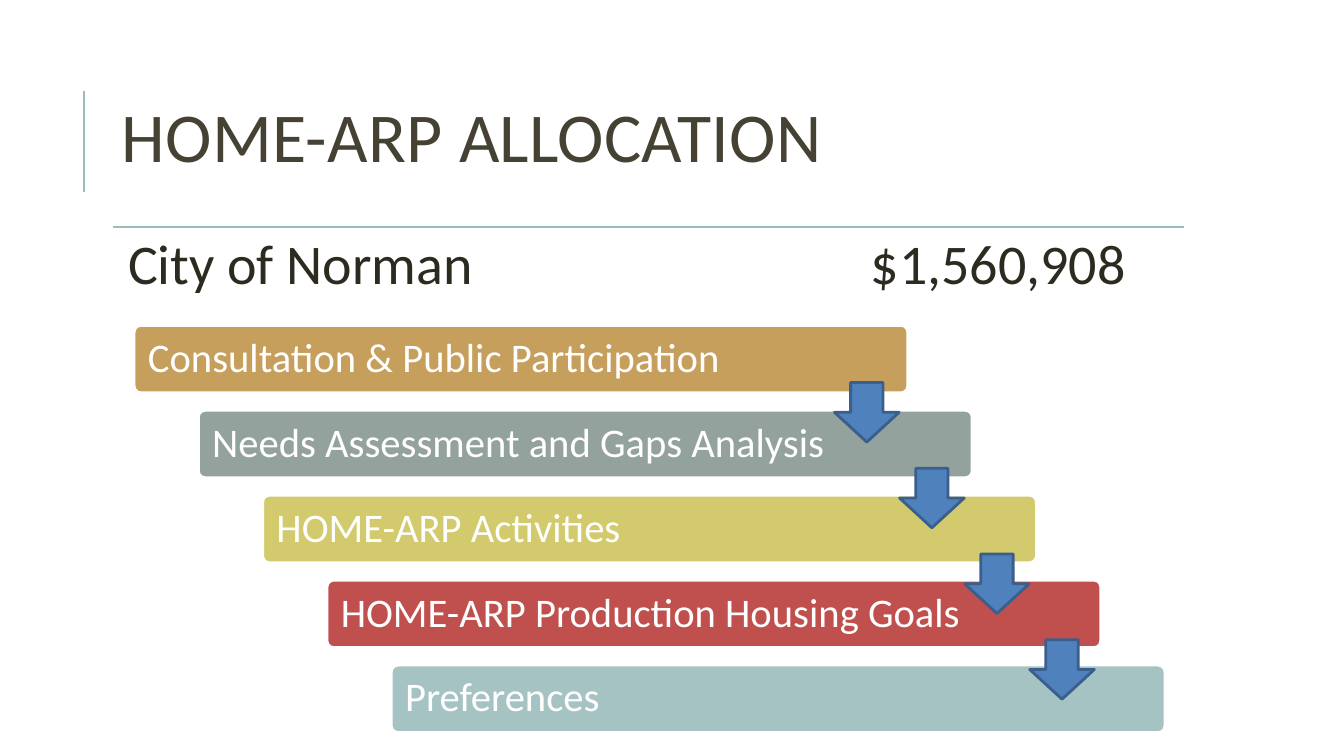
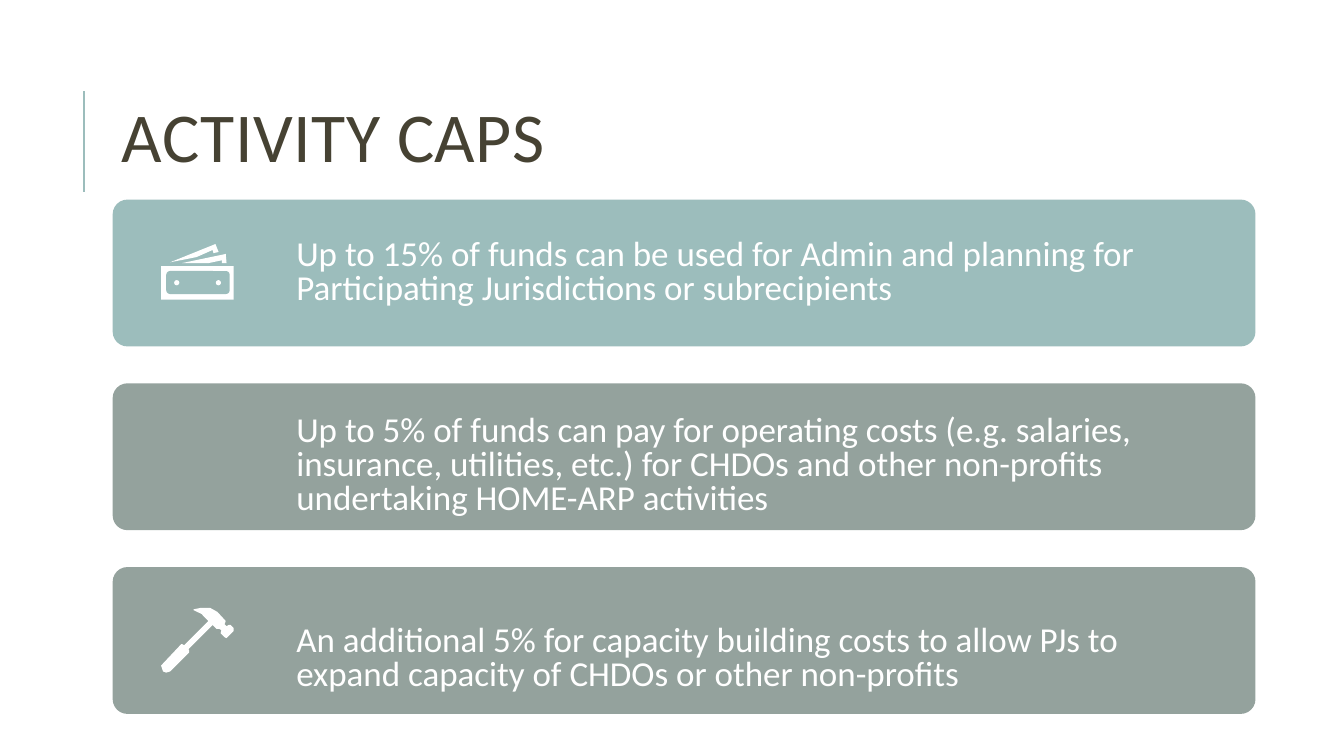
from dataclasses import dataclass

from lxml.etree import SubElement
from pptx import Presentation
from pptx.dml.color import RGBColor
from pptx.enum.shapes import MSO_CONNECTOR, MSO_SHAPE
from pptx.enum.text import MSO_ANCHOR, MSO_AUTO_SIZE, PP_ALIGN
from pptx.oxml.ns import qn
from pptx.util import Cm, Pt


# Colours and type sizes
@dataclass(frozen=True)
class Theme:
    font: str = "Calibri"
    head: str = "464233"
    ink: str = "2D2B20"
    white: str = "FFFFFF"
    teal: str = "9CBDBC"
    pale: str = "A6C3C3"
    sage: str = "94A29D"
    gold: str = "C79F5D"
    lime: str = "D2CA6C"
    red: str = "C0504D"
    blue: str = "4F81BD"
    navy: str = "3A5F8C"
    title: float = 50
    sum: float = 40
    step: float = 29
    card: float = 25


THEME = Theme()


def write(frame, text, size, color, anchor=MSO_ANCHOR.TOP, inset=0,
          before=0, lead=None, track=0):
    """Put one paragraph of styled text in a frame."""
    frame.word_wrap = True
    frame.auto_size = MSO_AUTO_SIZE.NONE
    frame.vertical_anchor = anchor
    frame.margin_left = frame.margin_right = Cm(inset)
    frame.margin_top = frame.margin_bottom = 0
    para = frame.paragraphs[0]
    para.alignment = PP_ALIGN.LEFT
    para.space_before = Pt(before)
    if lead:
        para.line_spacing = lead
    run = para.add_run()
    run.text = text
    run.font.name = THEME.font
    run.font.size = Pt(size)
    run.font.color.rgb = RGBColor.from_string(color)
    if track:
        run.font._element.set("spc", str(track))


class Deck:
    def __init__(self, theme):
        self.theme = theme
        self.prs = Presentation()
        self.prs.slide_width, self.prs.slide_height = Cm(33.87), Cm(19.05)
        self.slide = None

    def page(self, title, track):
        """Start a slide with its side rule and title."""
        self.slide = self.prs.slides.add_slide(self.prs.slide_layouts[5])
        self.rule(2.12, 2.3, 2.12, 4.84, 1.5)
        box = self.slide.shapes.title
        box.left, box.top, box.width, box.height = (
            Cm(3.07), Cm(2.34), Cm(21.77), Cm(2.18))
        write(box.text_frame, title, self.theme.title, self.theme.head,
              before=0.9, track=track)

    def rule(self, x1, y1, x2, y2, width):
        line = self.slide.shapes.add_connector(
            MSO_CONNECTOR.STRAIGHT, Cm(x1), Cm(y1), Cm(x2), Cm(y2))
        line.line.color.rgb = RGBColor.from_string(self.theme.teal)
        line.line.width = Pt(width)
        SubElement(line._element.spPr, qn("a:effectLst"))

    def text(self, x, y, w, h, words, **style):
        box = self.slide.shapes.add_textbox(Cm(x), Cm(y), Cm(w), Cm(h))
        write(box.text_frame, words, **style)

    def paint(self, shape, fill, edge=None):
        shape.shadow.inherit = False
        shape.fill.solid()
        shape.fill.fore_color.rgb = RGBColor.from_string(fill)
        if edge:
            shape.line.color.rgb = RGBColor.from_string(edge)
            shape.line.width = Pt(2)
        else:
            shape.line.fill.background()

    def shape(self, kind, x, y, w, h, fill, edge=None, bend=None):
        item = self.slide.shapes.add_shape(kind, Cm(x), Cm(y), Cm(w), Cm(h))
        self.paint(item, fill, edge)
        if bend is not None:
            item.adjustments[0] = bend
        return item

    def form(self, x, y, points, fill):
        """Draw a closed outline; points are in tenths of a millimetre."""
        pen = self.slide.shapes.build_freeform(*points[0], scale=Cm(0.01))
        pen.add_line_segments(points[1:], close=True)
        self.paint(pen.convert_to_shape(Cm(x), Cm(y)), fill)

    def step(self, x, y, words, fill):
        bar = self.shape(MSO_SHAPE.ROUNDED_RECTANGLE, x, y, 19.5, 1.7,
                         fill, self.theme.white, 0.1)
        write(bar.text_frame, words, self.theme.step, self.theme.white,
              anchor=MSO_ANCHOR.MIDDLE, inset=0.3, lead=0.9)

    def card(self, y, drop, words, fill):
        self.shape(MSO_SHAPE.ROUNDED_RECTANGLE, 2.84, y, 28.8, 3.7,
                   fill, bend=0.1)
        self.text(7.47, y + drop, 22.4, 2.6, words, size=self.theme.card,
                  color=self.theme.white, lead=Pt(24.5))

    def cash(self, x, y, back):
        """Draw a bank note with two more fanned out behind it."""
        white = self.theme.white
        for bill in BILLS:
            self.form(x + 0.23, y, bill, white)
        self.shape(MSO_SHAPE.RECTANGLE, x, y + 0.56, 1.83, 0.84, white)
        self.shape(MSO_SHAPE.ROUNDED_RECTANGLE, x + 0.13, y + 0.68,
                   1.6, 0.58, back)
        for shift in (0.33, 1.38):
            self.shape(MSO_SHAPE.OVAL, x + shift, y + 0.91,
                       0.13, 0.13, white)


# Icon outlines
BILLS = (
    [(122, 20), (114, 0), (0, 46), (66, 33), (107, 15), (109, 23)],
    [(142, 48), (140, 25), (30, 48), (97, 48), (130, 41), (130, 48)],
)
HAMMER = [
    (112, 0), (99, 0), (84, 3), (81, 5), (91, 10), (102, 15), (109, 23),
    (119, 33), (58, 94), (53, 91), (51, 91), (3, 142), (0, 145), (5, 160),
    (13, 163), (23, 160), (71, 112), (71, 107), (69, 104), (130, 43),
    (140, 53), (147, 53), (152, 56), (150, 64), (160, 74), (165, 76),
    (183, 58), (183, 51), (175, 43), (170, 43), (165, 46), (160, 41),
    (163, 33), (142, 10), (124, 0),
]

# Slide content
STEPS = (
    ("Consultation & Public Participation", THEME.gold),
    ("Needs Assessment and Gaps Analysis", THEME.sage),
    ("HOME-ARP Activities", THEME.lime),
    ("HOME-ARP Production Housing Goals", THEME.red),
    ("Preferences", THEME.pale),
)
CAPS = (
    (1, "Up to 15% of funds can be used for Admin and planning for "
        "Participating Jurisdictions or subrecipients", THEME.teal),
    (0.8, "Up to 5% of funds can pay for operating costs (e.g. salaries, "
          "insurance, utilities, etc.) for CHDOs and other non-profits "
          "undertaking HOME-ARP activities", THEME.sage),
    (1.47, "An additional 5% for capacity building costs to allow PJs to "
           "expand capacity of CHDOs or other non-profits", THEME.sage),
)


def main():
    deck = Deck(THEME)

    # Funds and the stair of steps
    deck.page("HOME-ARP ALLOCATION", 20)
    deck.rule(2.84, 5.72, 29.85, 5.72, 1.25)
    for x, w, words in ((3.23, 10, "City of Norman"), (21.95, 8, "$1,560,908")):
        deck.text(x, 5.77, w, 1.75, words, size=THEME.sum,
                  color=THEME.ink, before=1)
    for i, (words, fill) in enumerate(STEPS):
        deck.step(3.38 + 1.62 * i, 8.2 + 2.14 * i, words, fill)
    for i in range(len(STEPS) - 1):
        deck.shape(MSO_SHAPE.DOWN_ARROW, 21.03 + 1.64 * i, 9.64 + 2.16 * i,
                   1.63, 1.5, THEME.blue, THEME.navy)

    # Caps on cards
    deck.page("ACTIVITY CAPS", 40)
    for i, (drop, words, fill) in enumerate(CAPS):
        deck.card(5.03 + 4.63 * i, drop, words, fill)
    deck.cash(4.06, 6.15, THEME.teal)
    deck.form(4.06, 15.32, HAMMER, THEME.white)

    deck.prs.save("out.pptx")


if __name__ == "__main__":
    main()
